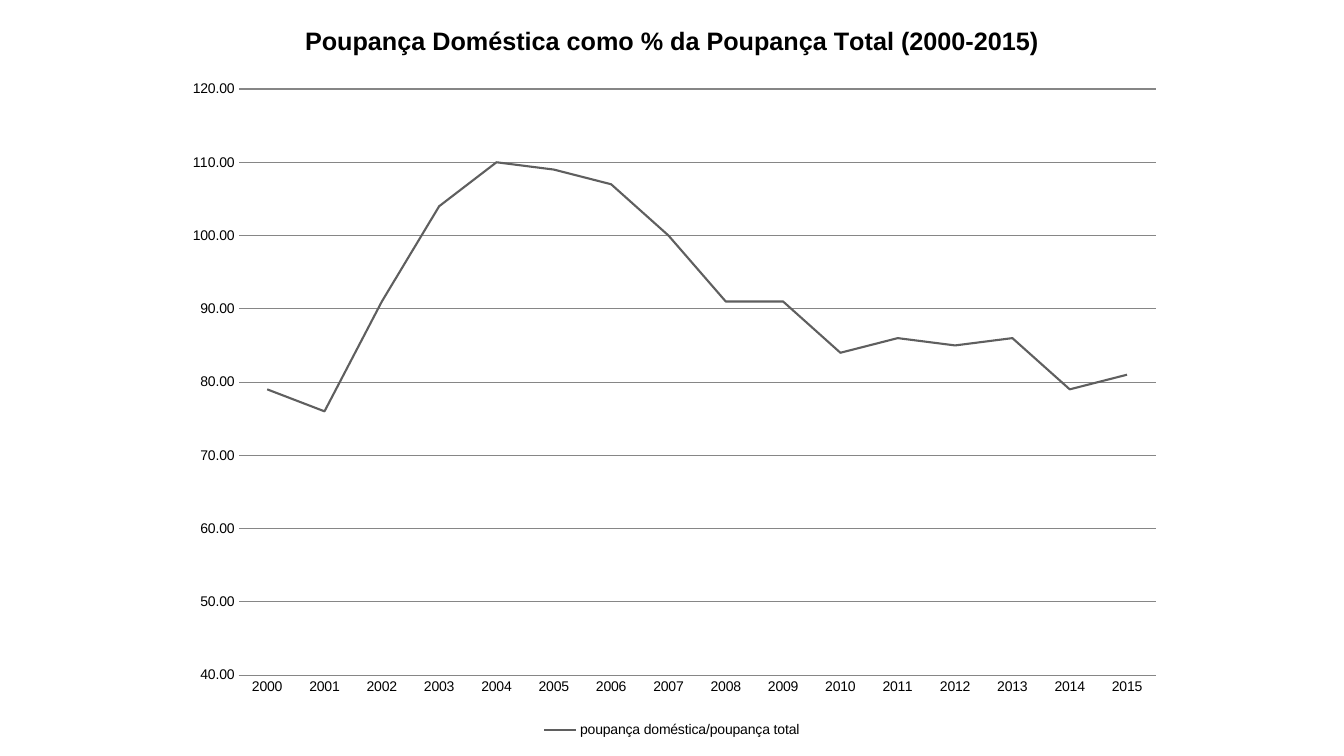
from pptx import Presentation
from pptx.chart.data import CategoryChartData
from pptx.dml.color import RGBColor
from pptx.enum.chart import XL_CHART_TYPE, XL_LEGEND_POSITION, XL_TICK_MARK
from pptx.oxml import parse_xml
from pptx.oxml.ns import nsdecls, qn
from pptx.util import Pt

BLACK = RGBColor(0x00, 0x00, 0x00)
GRAY = RGBColor(0x5F, 0x5F, 0x5F)
GRID = RGBColor(0x86, 0x86, 0x86)

SAVINGS = [79, 76, 91, 104, 110, 109, 107, 100, 91, 91, 84, 86, 85, 86, 79, 81]


def set_font(font, size, bold=False):
    font.name = "Arial"
    font.size = Pt(size)
    font.bold = bold
    font.color.rgb = BLACK


def set_line(line, color, width):
    line.color.rgb = color
    line.width = Pt(width)


def set_title(chart, text):
    chart.has_title = True
    tf = chart.chart_title.text_frame
    tf.text = text
    set_font(tf.paragraphs[0].font, 18, True)
    chart.chart_title.include_in_layout = False


def set_axis(axis):
    axis.major_tick_mark = XL_TICK_MARK.NONE
    axis.minor_tick_mark = XL_TICK_MARK.NONE
    set_font(axis.tick_labels.font, 10)


def set_plot_area(chart, x, y, w, h):
    area = chart.element.find(".//" + qn("c:plotArea"))
    for old in area.findall(qn("c:layout")):
        area.remove(old)
    sizes = "".join(f'<c:{tag} val="{val}"/>' for tag, val in zip("xywh", (x, y, w, h)))
    area.insert(0, parse_xml(
        f'<c:layout {nsdecls("c")}><c:manualLayout><c:layoutTarget val="inner"/>'
        f'<c:xMode val="edge"/><c:yMode val="edge"/>{sizes}</c:manualLayout></c:layout>'))


def add_line_chart(s, title, name, cats, vals):
    data = CategoryChartData(number_format="0.00")
    data.categories = cats
    data.add_series(name, vals)
    chart = s.shapes.add_chart(
        XL_CHART_TYPE.LINE, Pt(120), Pt(0), Pt(720), Pt(530), data).chart
    set_font(chart.font, 10)
    set_title(chart, title)

    set_axis(chart.category_axis)
    set_line(chart.category_axis.format.line, GRID, 0.75)
    axis = chart.value_axis
    set_axis(axis)
    axis.minimum_scale, axis.maximum_scale, axis.major_unit = 40, 120, 10
    axis.tick_labels.number_format = "0.00"
    axis.tick_labels.number_format_is_linked = False
    axis.format.line.fill.background()
    set_line(axis.major_gridlines.format.line, GRID, 0.75)

    chart.has_legend = True
    chart.legend.position = XL_LEGEND_POSITION.BOTTOM
    chart.legend.include_in_layout = False
    set_font(chart.legend.font, 10)

    chart.plots[0].vary_by_categories = False
    series = chart.plots[0].series[0]
    series.smooth = False
    set_line(series.format.line, GRAY, 1.5)
    set_plot_area(chart, 0.07, 0.12, 0.91, 0.79)


def main():
    prs = Presentation()
    prs.slide_width, prs.slide_height = Pt(960), Pt(540)
    s = prs.slides.add_slide(prs.slide_layouts[6])
    add_line_chart(s, "Poupança Doméstica como % da Poupança Total (2000-2015)",
                   "poupança doméstica/poupança total",
                   [str(year) for year in range(2000, 2016)], SAVINGS)
    prs.save("out.pptx")


if __name__ == "__main__":
    main()
